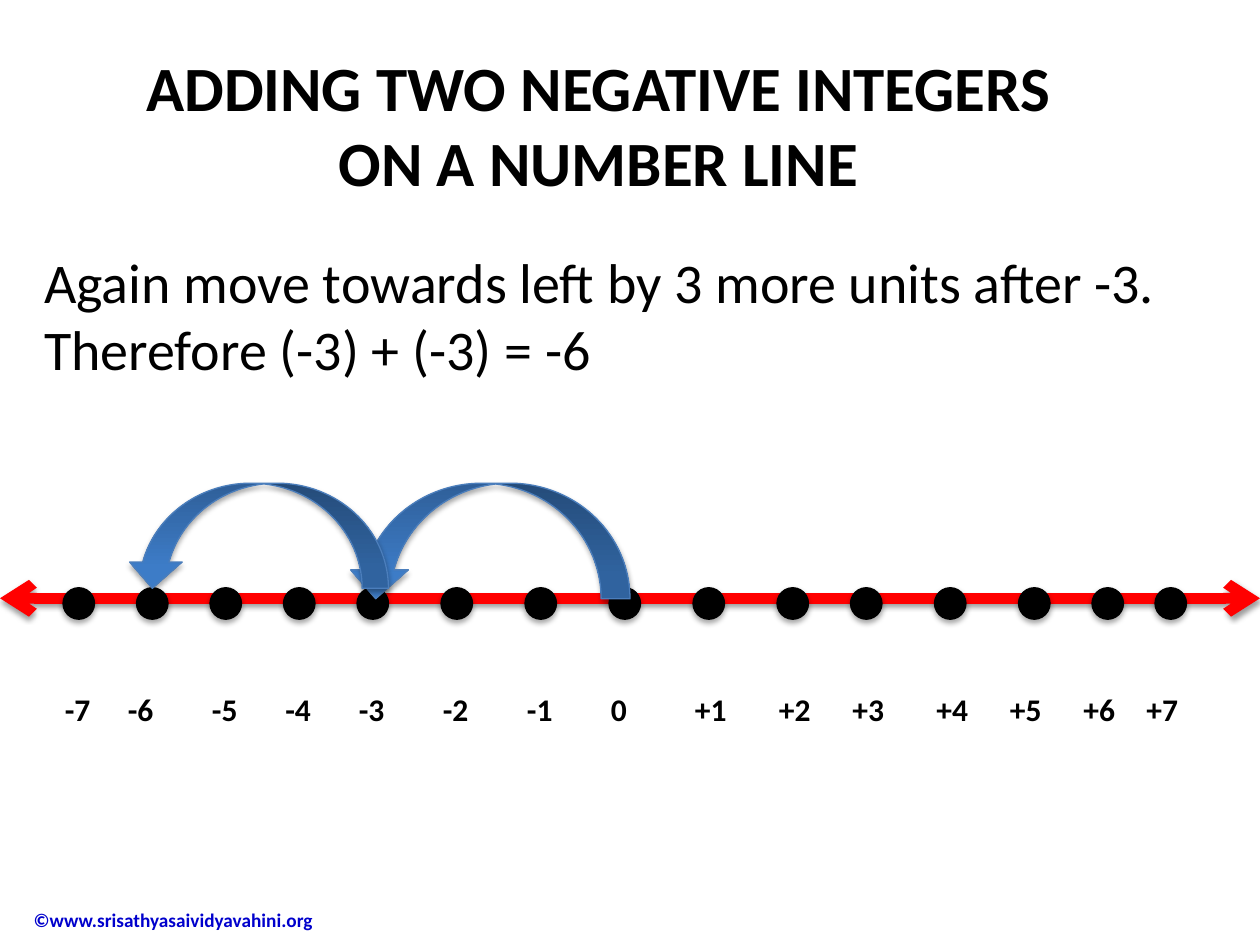
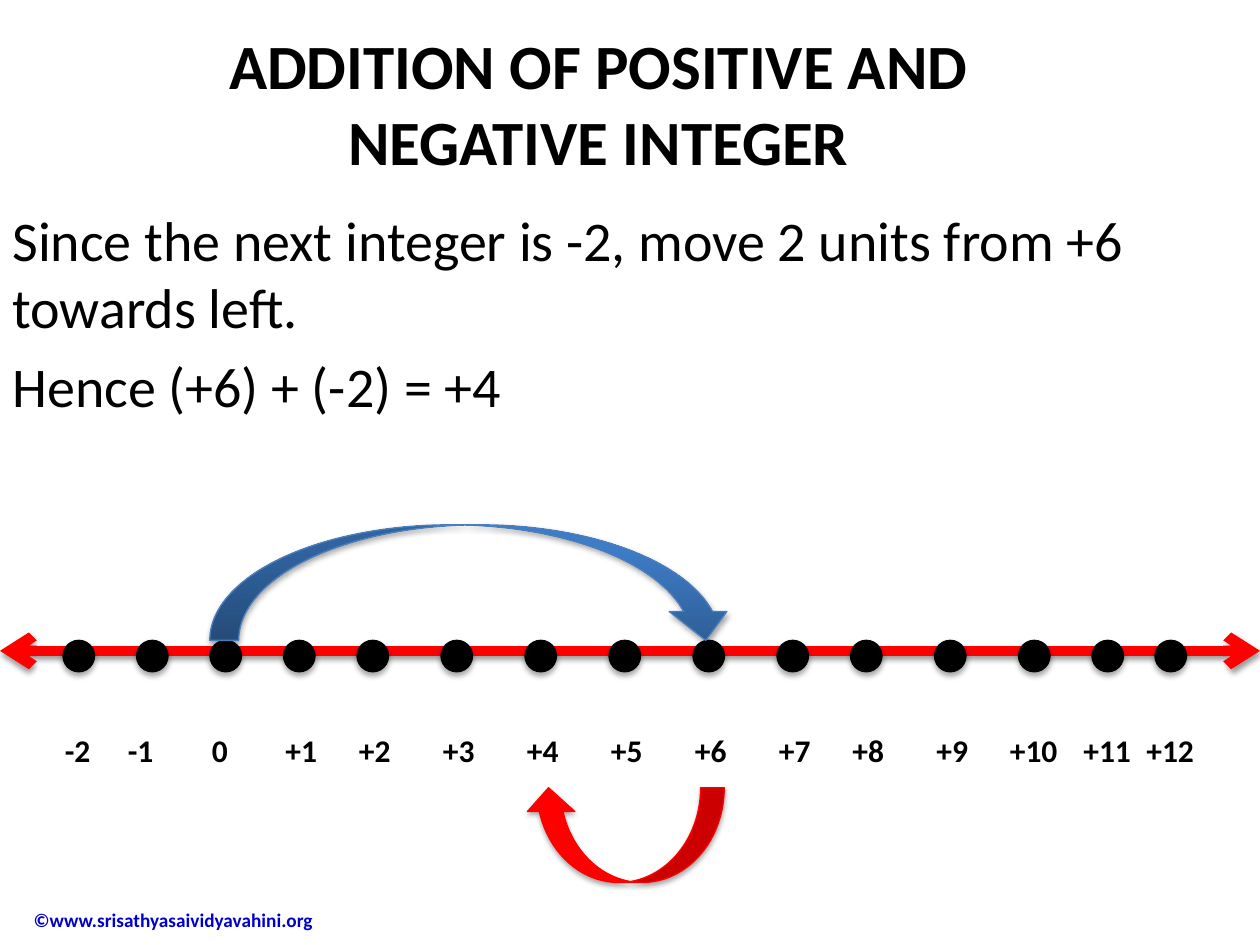
from itertools import accumulate

from lxml.etree import SubElement
from pptx import Presentation
from pptx.dml.color import RGBColor
from pptx.enum.shapes import MSO_CONNECTOR as Connector, MSO_SHAPE as Shape
from pptx.enum.text import MSO_ANCHOR as Anchor, MSO_AUTO_SIZE as AutoSize, PP_ALIGN as Align
from pptx.oxml.ns import qn
from pptx.util import Cm, Pt

COLOURS = {
    "text": "000000",
    "footer": "0000CC",
    "red": "FF0000",
    "blue_dark": "2F5F99",
    "blue_light": "3D7CC7",
    "blue_edge": "4B7EBC",
    "shadow": "000000",
}
FONT = "Calibri"
FOOTER = "©www.srisathyasaividyavahini.org"

SLIDES = [
    {
        "title": ["ADDING TWO NEGATIVE INTEGERS", "ON A NUMBER LINE"],
        "title_top": 0.85,
        "body": ["Again move towards left by 3 more units after -3. Therefore (-3) + (-3) = -6"],
        "body_area": (0.64, 4.87, 24.34, 2.96),
        "first_number": -7,
        "line_y": 12.06,
        "labels_top": 13.78,
        "jumps": [
            (Shape.CURVED_UP_ARROW, (6.99, 9.74, 5.71, 2.33), 180, "blue"),
            (Shape.CURVED_UP_ARROW, (2.54, 9.74, 5.29, 2.12), 180, "blue"),
        ],
    },
    {
        "title": ["ADDITION OF POSITIVE AND", "NEGATIVE INTEGER"],
        "title_top": 0.42,
        "body": [
            "Since the next integer is -2, move 2 units from +6 towards left.",
            "Hence (+6) + (-2) = +4",
        ],
        "body_area": (0, 4.02, 25.37, 4.66),
        "first_number": -2,
        "line_y": 13.12,
        "labels_top": 14.62,
        "jumps": [
            (Shape.CURVED_DOWN_ARROW, (4.23, 10.58, 10.58, 2.33), 0, "blue"),
            (Shape.CURVED_DOWN_ARROW, (10.58, 15.88, 4.02, 1.91), 180, "red"),
        ],
    },
]

PAGE_WIDTH, PAGE_HEIGHT = 25.4, 19.05
GRID = 2.54 / 12
DOT_STEPS = [6, 7, 7, 7, 7, 8, 8, 8, 8, 8, 7, 8, 8, 7, 6]
LABEL_STEPS = [5, 6, 8, 7, 7, 8, 8, 8, 8, 8, 7, 8, 7, 7, 6]
DOT_LEFTS = [step * GRID for step in accumulate(DOT_STEPS)]
LABEL_LEFTS = [step * GRID for step in accumulate(LABEL_STEPS)]
DOT_SIZE = 3 * GRID
LABEL_WIDTHS = {1: 0.84, 2: 1.04, 3: 1.17, 4: 1.47}


def colour(name):
    return RGBColor.from_string(COLOURS[name])


def add_span(para, text, size, bold=False, tint="text"):
    span = para.add_run()
    span.text = text
    span.font.name = FONT
    span.font.size = Pt(size)
    span.font.bold = bold
    span.font.color.rgb = colour(tint)


def add_box(page, area, wrap=True):
    box = page.shapes.add_textbox(*map(Cm, area))
    box.text_frame.word_wrap = wrap
    return box.text_frame


def add_shadow(effects, distance, alpha):
    shadow = SubElement(effects, qn("a:outerShdw"), blurRad="40000", dist=str(distance),
                        dir="5400000", rotWithShape="0")
    tint = SubElement(shadow, qn("a:srgbClr"), val=COLOURS["shadow"])
    SubElement(tint, qn("a:alpha"), val=str(alpha))


def add_solid(page, kind, area, fill, edge):
    shape = page.shapes.add_shape(kind, *map(Cm, area))
    if fill == "blue":
        shape.fill.gradient()
        shape.fill.gradient_angle = 90
        stops = zip(shape.fill.gradient_stops, (0, 0.8), ("blue_dark", "blue_light"))
        for stop, position, name in stops:
            stop.position = position
            stop.color.rgb = colour(name)
    else:
        shape.fill.solid()
        shape.fill.fore_color.rgb = colour(fill)
    shape.line.color.rgb = colour(edge)
    shape.line.width = Pt(0.75)
    shape.shadow.inherit = False
    add_shadow(shape._element.spPr.find(qn("a:effectLst")), 23000, 35000)
    return shape


def add_footer(page):
    frame = add_box(page, (-0.84, 18.03, 7.67, 1.04))
    frame.vertical_anchor = Anchor.MIDDLE
    para = frame.paragraphs[0]
    para._p.get_or_add_pPr().set("marL", str(Cm(1.27)))
    add_span(para, FOOTER, 11, True, "footer")


def add_title(page, lines, top):
    para = add_box(page, (1.48, top, 21.17, 3.17)).paragraphs[0]
    para.alignment = Align.CENTER
    for index, line in enumerate(lines):
        if index:
            para.add_line_break()
        add_span(para, line, 36, True)


def add_body(page, texts, area):
    frame = add_box(page, area)
    for index, text in enumerate(texts):
        para = frame.add_paragraph() if index else frame.paragraphs[0]
        if index:
            para.space_before = Pt(6.4)
        add_span(para, text, 32)


def add_number_line(page, y, labels_top, first):
    axis = page.shapes.add_connector(Connector.STRAIGHT, Cm(0), Cm(y), Cm(PAGE_WIDTH), Cm(y))
    axis.line.color.rgb = colour("red")
    axis.line.width = Pt(6)
    properties = axis._element.spPr
    for end in ("a:headEnd", "a:tailEnd"):
        SubElement(properties.find(qn("a:ln")), qn(end), type="arrow")
    add_shadow(SubElement(properties, qn("a:effectLst")), 20000, 38000)

    for left in DOT_LEFTS:
        add_solid(page, Shape.OVAL, (left, y - GRID, DOT_SIZE, DOT_SIZE), "text", "text")
    for number, left in enumerate(LABEL_LEFTS, first):
        label = f"{number:+d}" if number else "0"
        width = LABEL_WIDTHS[len(label) + (number > 0)]
        frame = add_box(page, (left, labels_top, width, 1.03), wrap=False)
        frame.auto_size = AutoSize.SHAPE_TO_FIT_TEXT
        add_span(frame.paragraphs[0], label, 18, True)


def add_jump(page, kind, area, rotation, fill):
    edge = "blue_edge" if fill == "blue" else fill
    add_solid(page, kind, area, fill, edge).rotation = rotation


def main():
    deck = Presentation()
    deck.slide_width, deck.slide_height = Cm(PAGE_WIDTH), Cm(PAGE_HEIGHT)
    for content in SLIDES:
        page = deck.slides.add_slide(deck.slide_layouts[6])
        add_footer(page)
        add_title(page, content["title"], content["title_top"])
        add_body(page, content["body"], content["body_area"])
        add_number_line(page, content["line_y"], content["labels_top"], content["first_number"])
        for jump in content["jumps"]:
            add_jump(page, *jump)
    deck.save("out.pptx")


if __name__ == "__main__":
    main()
